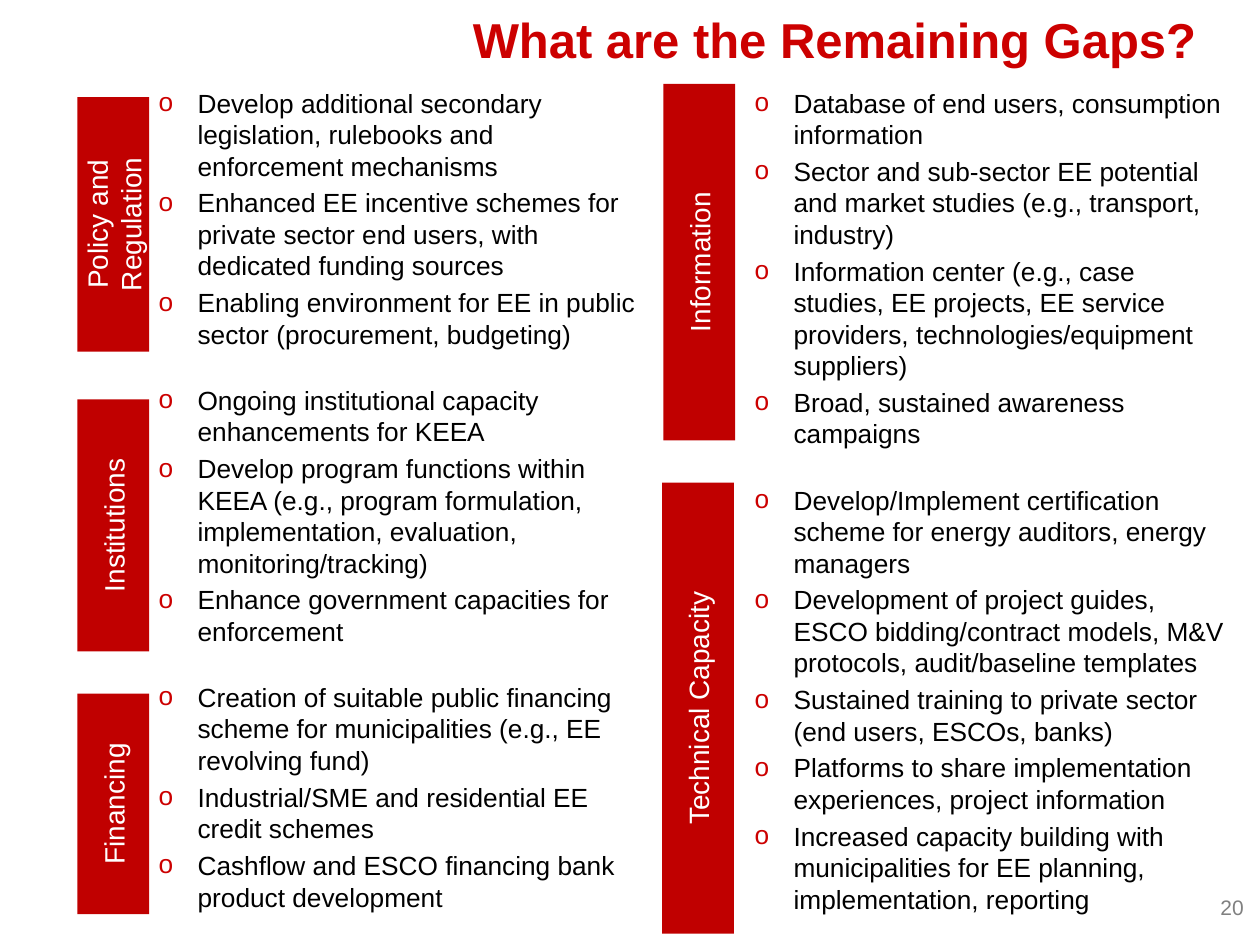
from lxml import etree
from pptx import Presentation
from pptx import util as u
from pptx.dml.color import RGBColor
from pptx.enum import shapes, text
from pptx.oxml.ns import qn

RED = RGBColor(0xCC, 0x00, 0x00)
BAR_RED = RGBColor(0xC0, 0x00, 0x00)
BLACK = RGBColor(0x00, 0x00, 0x00)
WHITE = RGBColor(0xFF, 0xFF, 0xFF)
GRAY = RGBColor(0x80, 0x80, 0x80)
BAR_THICKNESS = 0.57

COLUMNS = [
    ((0.72, 0.64, 4.5, 6.78), [
        ["Develop additional secondary legislation, rulebooks and enforcement mechanisms",
         "Enhanced EE incentive schemes for private sector end users, with dedicated funding sources",
         "Enabling environment for EE in public sector (procurement, budgeting)"],
        ["Ongoing institutional capacity enhancements for KEEA",
         "Develop program functions within KEEA (e.g., program formulation, implementation, "
         "evaluation, monitoring/tracking)",
         "Enhance government capacities for enforcement"],
        ["Creation of suitable public financing scheme for municipalities (e.g., EE revolving fund)",
         "Industrial/SME and residential EE credit schemes",
         "Cashflow and ESCO financing bank product development"],
    ]),
    ((5.45, 0.64, 4.39, 6.61), [
        ["Database of end users, consumption information",
         "Sector and sub-sector EE potential and market studies (e.g., transport, industry)",
         "Information center (e.g., case studies, EE projects, EE service providers, "
         "technologies/equipment suppliers)",
         "Broad, sustained awareness campaigns"],
        ["Develop/Implement certification scheme for energy auditors, energy managers",
         "Development of project guides, ESCO bidding/contract models, M&V protocols, "
         "audit/baseline templates",
         "Sustained training to private sector (end users, ESCOs, banks)",
         "Platforms to share implementation experiences, project information",
         "Increased capacity building with municipalities for EE planning, implementation, reporting"],
    ]),
]

BARS = [
    ("Policy and Regulation", 0.9, 1.78, 2.02),
    ("Institutions", 0.9, 4.17, 2),
    ("Financing", 0.9, 6.38, 1.75),
    ("Information", 5.55, 2.08, 2.83),
    ("Technical Capacity", 5.54, 5.62, 3.58),
]


def add_span(para, wording, size, color, bold=False):
    span = para.add_run()
    span.text = wording
    span.font.name = "Arial"
    span.font.size = u.Pt(size)
    span.font.bold = bold
    span.font.color.rgb = color


def add_box(page, left, top, width, height):
    box = page.shapes.add_textbox(u.Inches(left), u.Inches(top), u.Inches(width), u.Inches(height))
    box.text_frame.word_wrap = True
    return box.text_frame


deck = Presentation()
deck.slide_width = u.Inches(10)
deck.slide_height = u.Inches(7.5)
page = deck.slides.add_slide(deck.slide_layouts[6])

title = add_box(page, 0.04, -0.08, 9.55, 0.67)
title.vertical_anchor = text.MSO_ANCHOR.BOTTOM
title.paragraphs[0].alignment = text.PP_ALIGN.RIGHT
add_span(title.paragraphs[0], "What are the Remaining Gaps?", 28, RED, bold=True)

for area, groups in COLUMNS:
    column = add_box(page, *area)
    para = column.paragraphs[0]
    for group_index, group in enumerate(groups):
        for item_index, item in enumerate(group):
            if group_index or item_index:
                para = column.add_paragraph()
            properties = para._p.get_or_add_pPr()
            properties.set("marL", str(u.Inches(0.75)))
            properties.set("indent", str(u.Inches(-0.31)))
            bullet_color = etree.SubElement(properties, qn("a:buClr"))
            etree.SubElement(bullet_color, qn("a:srgbClr"), val=str(RED))
            etree.SubElement(properties, qn("a:buFont"), typeface="Arial")
            etree.SubElement(properties, qn("a:buChar"), char="o")
            if item_index:
                para.space_before = u.Pt(3)
            elif group_index:
                para.space_before = u.Pt(19.8)
            add_span(para, item, 15, BLACK)

for label, center_x, center_y, length in BARS:
    bar = page.shapes.add_shape(
        shapes.MSO_SHAPE.RECTANGLE,
        u.Inches(center_x - length / 2), u.Inches(center_y - BAR_THICKNESS / 2),
        u.Inches(length), u.Inches(BAR_THICKNESS))
    bar.rotation = 270
    bar.shadow.inherit = False
    bar.fill.solid()
    bar.fill.fore_color.rgb = BAR_RED
    bar.line.fill.background()
    bar.text_frame.word_wrap = True
    bar.text_frame.vertical_anchor = text.MSO_ANCHOR.MIDDLE
    para = bar.text_frame.paragraphs[0]
    para.alignment = text.PP_ALIGN.CENTER
    add_span(para, label, 16, WHITE)

number = add_box(page, 8.47, 7.05, 1.5, 0.43)
number.paragraphs[0].alignment = text.PP_ALIGN.RIGHT
add_span(number.paragraphs[0], "20", 12, GRAY)

deck.save("out.pptx")
